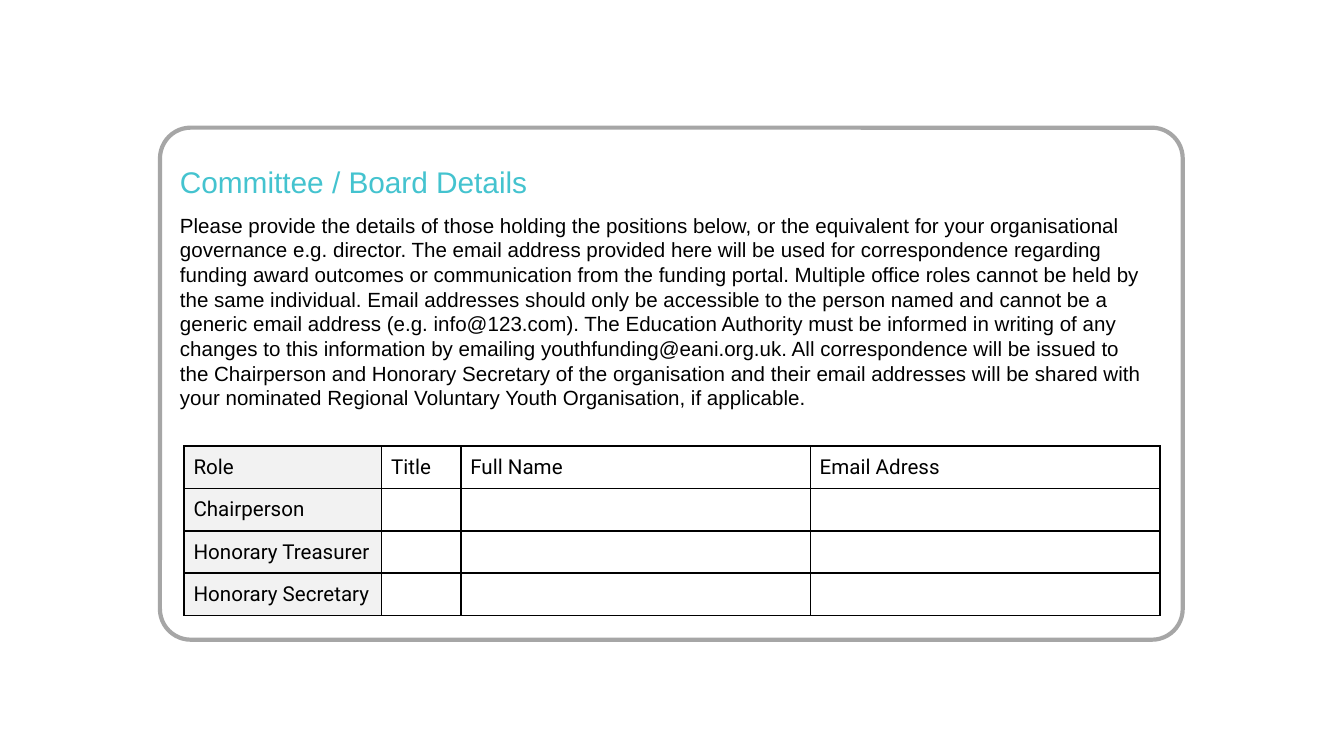
import pptx
import pptx.util
import pptx.dml.color
import pptx.enum.shapes
import pptx.enum.text
import pptx.oxml

PX = 914400 // 200
BLACK = pptx.dml.color.RGBColor(0x00, 0x00, 0x00)
GREY = pptx.dml.color.RGBColor(0xA6, 0xA6, 0xA6)
PALE = pptx.dml.color.RGBColor(0xF2, 0xF2, 0xF2)
TEAL = pptx.dml.color.RGBColor(0x44, 0xC3, 0xCF)
MIDDLE = pptx.enum.text.MSO_ANCHOR.MIDDLE
NS = "http://schemas.openxmlformats.org/drawingml/2006/main"

TITLE = "Committee / Board Details"
BODY = (
    "Please provide the details of those holding the positions below, or the "
    "equivalent for your organisational governance e.g. director. The email "
    "address provided here will be used for correspondence regarding funding "
    "award outcomes or communication from the funding portal. Multiple office "
    "roles cannot be held by the same individual. Email addresses should only "
    "be accessible to the person named and cannot be a generic email address "
    "(e.g. info@123.com). The Education Authority must be informed in writing "
    "of any changes to this information by emailing "
    "youthfunding@eani.org.uk. All correspondence will be issued to the "
    "Chairperson and Honorary Secretary of the organisation and their email "
    "addresses will be shared with your nominated Regional Voluntary Youth "
    "Organisation, if applicable."
)
HEADS = ["Role", "Title", "Full Name", "Email Adress"]
ROLES = ["Chairperson", "Honorary Treasurer", "Honorary Secretary"]
COLS = [294, 118, 520, 520]
ROW = 63


def px(*nums):
    return [pptx.util.Emu(num * PX) for num in nums]


def style(para, face, size, color):
    para.font.name = face
    para.font.size = pptx.util.Pt(size)
    para.font.bold = False
    para.font.color.rgb = color


def add_frame(slide):
    kind = pptx.enum.shapes.MSO_SHAPE.ROUNDED_RECTANGLE
    frame = slide.shapes.add_shape(kind, *px(238, 190, 1522, 762))
    frame.adjustments[0] = 0.06
    frame.shadow.inherit = False
    frame.fill.background()
    frame.line.color.rgb = GREY
    frame.line.width = pptx.util.Pt(2.25)


def add_intro(slide):
    text = slide.shapes.add_textbox(*px(248, 232, 1478, 390)).text_frame
    text.word_wrap = True
    text.vertical_anchor = MIDDLE
    head = text.paragraphs[0]
    head.text = TITLE
    style(head, "Arial", 16, TEAL)
    body = text.add_paragraph()
    body.text = BODY
    body.space_before = pptx.util.Pt(7)
    style(body, "Arial", 11, BLACK)


def add_edges(cell):
    props = cell._tc.get_or_add_tcPr()
    for side in "LRTB":
        props.append(pptx.oxml.parse_xml(
            f'<a:ln{side} xmlns:a="{NS}" w="12700"><a:solidFill>'
            f'<a:srgbClr val="{BLACK}"/></a:solidFill></a:ln{side}>'))


def fill_cell(cell, text, shaded):
    add_edges(cell)
    cell.margin_left, cell.margin_right = px(14, 14)
    cell.margin_top = cell.margin_bottom = 0
    cell.vertical_anchor = MIDDLE
    if shaded:
        cell.fill.solid()
        cell.fill.fore_color.rgb = PALE
    else:
        cell.fill.background()
    para = cell.text_frame.paragraphs[0]
    para.text = text
    style(para, "Roboto", 11, BLACK)


def add_roles(slide):
    blank = [""] * (len(HEADS) - 1)
    data = [HEADS] + [[role] + blank for role in ROLES]
    box = px(274, 664, sum(COLS), ROW * len(data))
    table = slide.shapes.add_table(len(data), len(COLS), *box).table
    table.first_row = False
    table.horz_banding = False
    for col, width in zip(table.columns, px(*COLS)):
        col.width = width
    for row, texts in zip(table.rows, data):
        row.height = px(ROW)[0]
        for num, text in enumerate(texts):
            fill_cell(row.cells[num], text, num == 0)


def main():
    deck = pptx.Presentation()
    deck.slide_width, deck.slide_height = px(2000, 1125)
    slide = deck.slides.add_slide(deck.slide_layouts[6])
    add_roles(slide)
    add_frame(slide)
    add_intro(slide)
    deck.save("out.pptx")


if __name__ == "__main__":
    main()
